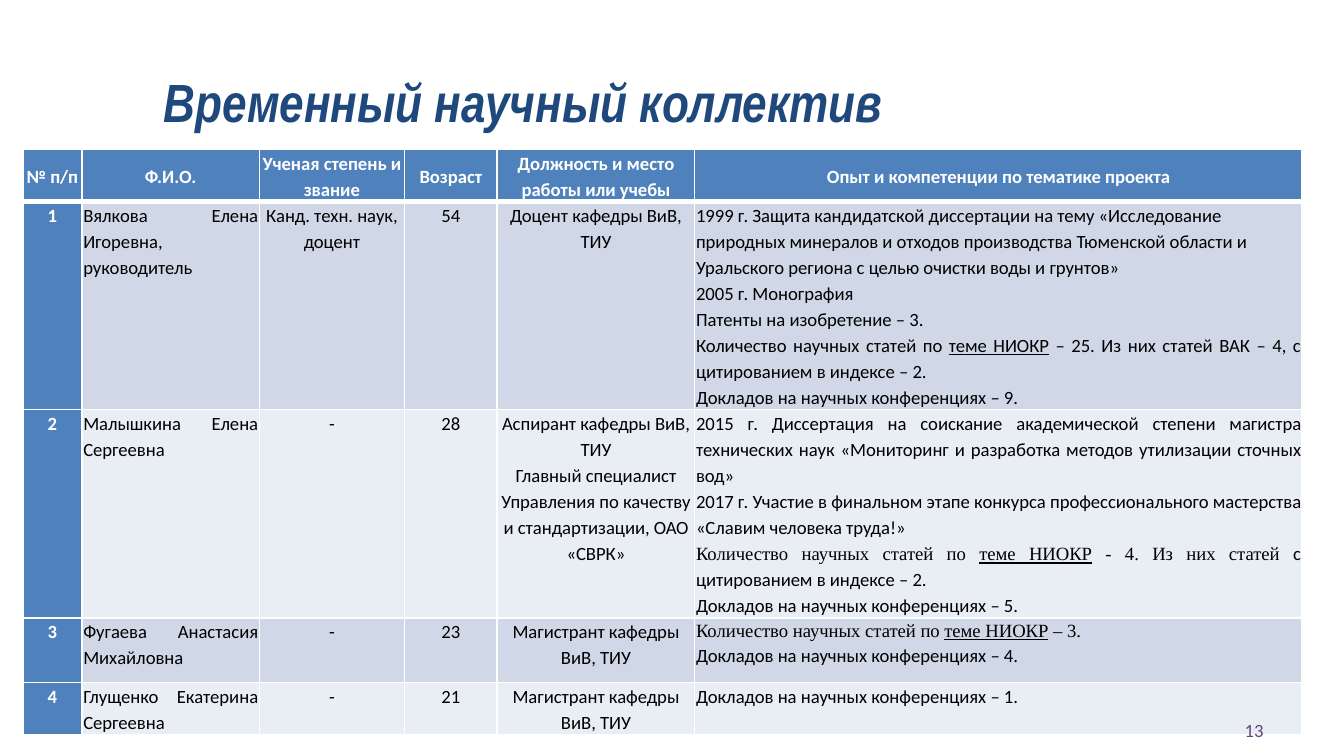
from lxml import etree
from pptx import Presentation
from pptx.dml.color import RGBColor
from pptx.enum import text
from pptx.oxml.ns import qn
from pptx.util import Inches, Pt

COLORS = {
    "title": "1F497D", "number": "604A7B", "head": "4F81BD",
    "odd": "D0D8E8", "even": "E9EDF4", "white": "FFFFFF", "black": "000000",
}
LEFT, CENTER, RIGHT, JUSTIFY = (
    text.PP_ALIGN.LEFT, text.PP_ALIGN.CENTER, text.PP_ALIGN.RIGHT, text.PP_ALIGN.JUSTIFY)
MIDDLE = text.MSO_ANCHOR.MIDDLE


def add_run(p, words, size=10, font="Calibri", color="black", bold=False,
            italic=False, underline=False):
    r = p.add_run()
    r.text = words
    r.font.size = Pt(size)
    r.font.name = font
    r.font.color.rgb = RGBColor.from_string(COLORS[color])
    r.font.bold, r.font.italic, r.font.underline = bold, italic, underline


def set_border(cell, side, width):
    """Draw a white line of the given width in points on side L, R, T or B."""
    ln = etree.SubElement(cell._tc.get_or_add_tcPr(), qn(f"a:ln{side}"), w=str(Pt(width)))
    fill = etree.SubElement(ln, qn("a:solidFill"))
    etree.SubElement(fill, qn("a:srgbClr"), val=COLORS["white"])


prs = Presentation()
prs.slide_width = Inches(10)
prs.slide_height = prs.slide_width * 9 // 16
s = prs.slides.add_slide(prs.slide_layouts[5])

# A paragraph is a string or a list of (words, format) runs.
serif = {"font": "Times New Roman"}
ARTICLES = "Количество научных статей по "
TOPIC = "теме НИОКР"
header = ["№ п/п", "Ф.И.О.", "Ученая степень и звание", "Возраст",
          "Должность и место работы или учебы", "Опыт и компетенции по тематике проекта"]
members = [
    ["Вялкова Елена Игоревна, руководитель", "Канд. техн. наук, доцент", "54",
     ["Доцент кафедры ВиВ, ТИУ"],
     ["1999 г. Защита кандидатской диссертации на тему «Исследование природных минералов "
      "и отходов производства Тюменской области и Уральского региона с целью очистки воды "
      "и грунтов»",
      "2005 г. Монография",
      "Патенты на изобретение – 3.",
      [(ARTICLES, {}), (TOPIC, {"underline": True}),
       (" – 25. Из них статей ВАК – 4, с цитированием в индексе – 2.", {})],
      "Докладов на научных конференциях – 9."]],
    ["Малышкина Елена Сергеевна", "-", "28",
     ["Аспирант кафедры ВиВ, ТИУ",
      "Главный специалист Управления по качеству и стандартизации, ОАО «СВРК»"],
     ["2015 г. Диссертация на соискание академической степени магистра технических наук "
      "«Мониторинг и разработка методов утилизации сточных вод»",
      "2017 г. Участие в финальном этапе конкурса профессионального мастерства "
      "«Славим человека труда!»",
      [(ARTICLES, serif), (TOPIC, {**serif, "underline": True}),
       (" - 4. Из них статей ", serif), ("с цитированием в индексе – 2.", {})],
      "Докладов на научных конференциях – 5."]],
    ["Фугаева Анастасия Михайловна", "-", "23", ["Магистрант кафедры ВиВ, ТИУ"],
     [[(ARTICLES, serif), (TOPIC, {**serif, "underline": True}), (" – 3.", serif)],
      "Докладов на научных конференциях – 4."]],
    ["Глущенко Екатерина Сергеевна", "-", "21", ["Магистрант кафедры ВиВ, ТИУ"],
     ["Докладов на научных конференциях – 1."]],
]
rows = [header] + [[str(n), *member] for n, member in enumerate(members, 1)]

widths = [0.44, 1.32, 1.08, 0.69, 1.47, 4.52]
heights = [0.15, 1.55, 1.51, 0.48, 0.19]
table = s.shapes.add_table(len(rows), len(widths), Inches(0.17), Inches(1.11),
                           Inches(sum(widths)), Inches(sum(heights))).table
for column, width in zip(table.columns, widths):
    column.width = Inches(width)
for row, height in zip(table.rows, heights):
    row.height = Inches(height)

for i, row in enumerate(rows):
    for j, content in enumerate(row):
        cell = table.cell(i, j)
        is_head = i == 0 or j == 0
        cell.margin_left = cell.margin_right = Inches(0.01)
        cell.margin_top = cell.margin_bottom = 0
        if i == 0:
            cell.vertical_anchor = MIDDLE
        for side, width in (("L", 1), ("R", 1), ("T", 3 if i == 1 else 1),
                            ("B", 3 if i == 0 else 1)):
            set_border(cell, side, width)
        cell.fill.solid()
        fill = "head" if is_head else "odd" if i % 2 else "even"
        cell.fill.fore_color.rgb = RGBColor.from_string(COLORS[fill])

        tf = cell.text_frame
        for k, runs in enumerate([content] if isinstance(content, str) else content):
            p = tf.add_paragraph() if k else tf.paragraphs[0]
            p.line_spacing = 1.15
            p.alignment = JUSTIFY if i and j in (1, 5) else CENTER
            if i == 1 and j == 5 and k < 3:
                p.alignment = LEFT
            for words, fmt in [(runs, {})] if isinstance(runs, str) else runs:
                add_run(p, words, color="white" if is_head else "black", bold=is_head, **fmt)

number = s.shapes.add_textbox(Inches(7.17), Inches(5.28), Inches(2.33), Inches(0.3))
tf = number.text_frame
tf.word_wrap = True
tf.vertical_anchor = MIDDLE
tf.paragraphs[0].alignment = RIGHT
add_run(tf.paragraphs[0], "13", color="number")

title = s.shapes.title
title.left, title.top = Inches(1.06), Inches(0.53)
title.width, title.height = Inches(5.67), Inches(0.45)
tf = title.text_frame
tf.auto_size = text.MSO_AUTO_SIZE.NONE
tf.vertical_anchor = MIDDLE
tf.paragraphs[0].alignment = CENTER
add_run(tf.paragraphs[0], "Временный научный коллектив", size=28.8, font="Arial Narrow",
        color="title", bold=True, italic=True)

prs.save("out.pptx")
